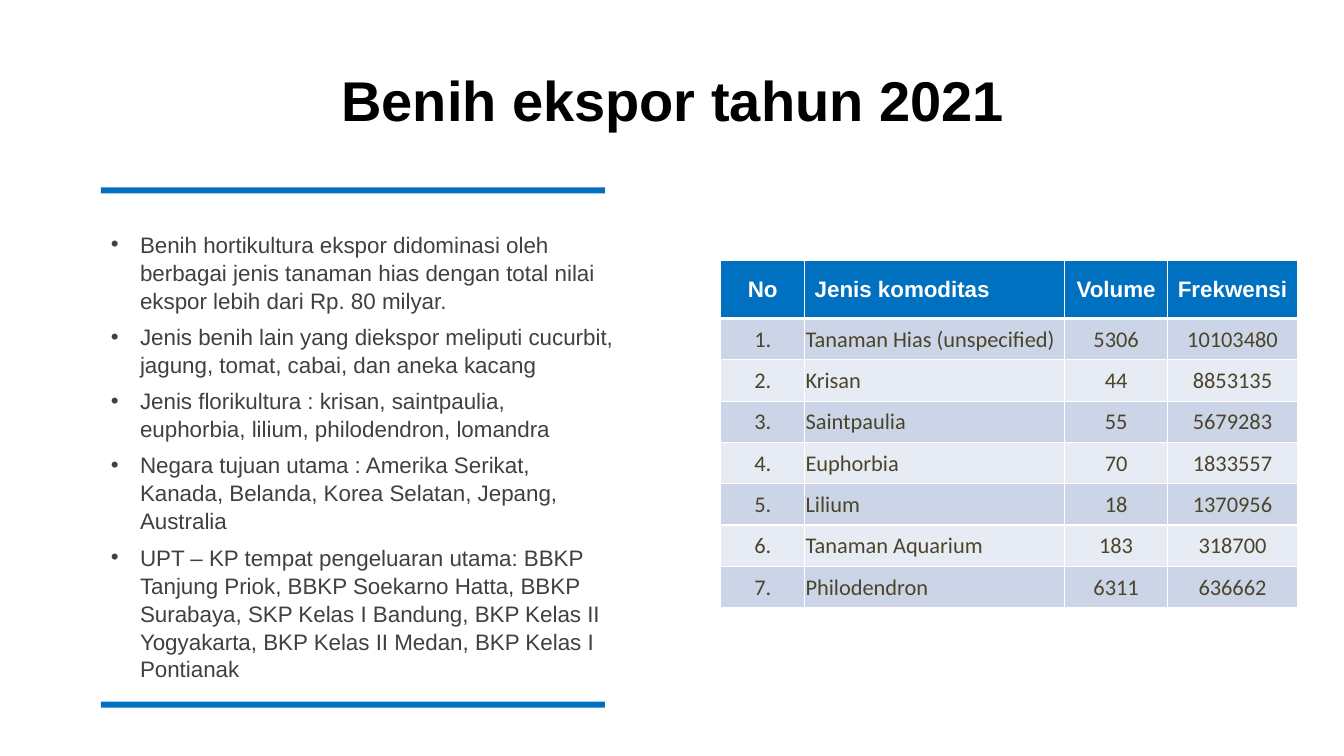
"""Build the slide on seed exports in 2021."""
import pptx
import pptx.dml.color
import pptx.enum.shapes
import pptx.enum.text
import pptx.oxml
import pptx.oxml.ns
import pptx.util
from lxml import etree

Inches, Pt = pptx.util.Inches, pptx.util.Pt
ALIGN = pptx.enum.text.PP_ALIGN
MIDDLE = pptx.enum.text.MSO_ANCHOR.MIDDLE

TITLE = "Benih ekspor tahun 2021"
POINTS = [
    "Benih hortikultura ekspor didominasi oleh berbagai jenis tanaman hias dengan total nilai ekspor lebih dari Rp. 80 milyar.",
    "Jenis benih lain yang diekspor meliputi cucurbit, jagung, tomat, cabai, dan aneka kacang",
    "Jenis florikultura : krisan, saintpaulia, euphorbia, lilium, philodendron, lomandra",
    "Negara tujuan utama : Amerika Serikat, Kanada, Belanda, Korea Selatan, Jepang, Australia",
    "UPT – KP tempat pengeluaran utama: BBKP Tanjung Priok, BBKP Soekarno Hatta, BBKP Surabaya, "
    "SKP Kelas I Bandung, BKP Kelas II Yogyakarta, BKP Kelas II Medan, BKP Kelas I Pontianak",
]
HEADER = ("No", "Jenis komoditas", "Volume", "Frekwensi")
COMMODITIES = [
    ("Tanaman Hias (unspecified)", 5306, 10103480),
    ("Krisan", 44, 8853135),
    ("Saintpaulia", 55, 5679283),
    ("Euphorbia", 70, 1833557),
    ("Lilium", 18, 1370956),
    ("Tanaman Aquarium", 183, 318700),
    ("Philodendron", 6311, 636662),
]
COL_WIDTHS = (0.83, 2.58, 1.02, 1.29)
HEADER_HEIGHT, ROW_HEIGHT = 0.58, 0.41
RULE_TOPS = (1.86, 6.96)
BLUE, WHITE, BLACK, GREY, OLIVE = "0070C0", "FFFFFF", "000000", "404040", "4A452A"
BANDS = ("CCD5E8", "E7EBF4")


def rgb(value):
    return pptx.dml.color.RGBColor.from_string(value)


def fill(target, color):
    target.fill.solid()
    target.fill.fore_color.rgb = rgb(color)


def add_run(p, text, size, font, color, bold=False):
    r = p.add_run()
    r.text = text
    r.font.size, r.font.name, r.font.bold = Pt(size), font, bold
    r.font.color.rgb = rgb(color)


def add_bullet(p, indent):
    pPr = p._p.get_or_add_pPr()
    pPr.set("marL", str(Inches(indent)))
    pPr.set("indent", str(-Inches(indent)))
    for tag, key, value in (("a:buFont", "typeface", "Arial"), ("a:buChar", "char", "•")):
        etree.SubElement(pPr, pptx.oxml.ns.qn(tag)).set(key, value)


def set_borders(cell, widths):
    tcPr = cell._tc.get_or_add_tcPr()
    for i, (side, width) in enumerate(zip("LRTB", widths)):
        tcPr.insert(i, pptx.oxml.parse_xml(
            f'<a:ln{side} {pptx.oxml.ns.nsdecls("a")} w="{Pt(width)}"><a:solidFill>'
            f'<a:srgbClr val="{WHITE}"/></a:solidFill></a:ln{side}>'))


def add_title(s):
    title = s.shapes.title
    title.left, title.top, title.width, title.height = map(Inches, (0.34, 0.63, 12.66, 0.79))
    tf = title.text_frame
    tf.word_wrap, tf.vertical_anchor = True, MIDDLE
    p = tf.paragraphs[0]
    p.alignment, p.line_spacing = ALIGN.CENTER, 0.9
    add_run(p, TITLE, 40, "Arial", BLACK, True)


def add_rule(s, top):
    rule = s.shapes.add_shape(pptx.enum.shapes.MSO_SHAPE.RECTANGLE,
                              Inches(1), Inches(top), Inches(5), Inches(0.06))
    rule.shadow.inherit = False
    fill(rule, BLUE)
    rule.line.fill.background()


def add_points(s):
    tf = s.shapes.add_textbox(*map(Inches, (1, 2.23, 5.19, 4.48))).text_frame
    tf.word_wrap = True
    for i, text in enumerate(POINTS):
        p = tf.add_paragraph() if i else tf.paragraphs[0]
        add_bullet(p, 0.29)
        p.line_spacing = 1.04
        p.space_after = Pt(6 if i < len(POINTS) - 1 else 0)
        add_run(p, text, 16, "Arial", GREY)


def add_commodities(s):
    rows = [HEADER] + [(f"{n}.", *row) for n, row in enumerate(COMMODITIES, 1)]
    height = HEADER_HEIGHT + ROW_HEIGHT * len(COMMODITIES)
    table = s.shapes.add_table(len(rows), len(HEADER), Inches(7.15), Inches(2.58),
                               Inches(sum(COL_WIDTHS)), Inches(height)).table
    for column, width in zip(table.columns, COL_WIDTHS):
        column.width = Inches(width)
    for i, row in enumerate(rows):
        table.rows[i].height = Inches(ROW_HEIGHT if i else HEADER_HEIGHT)
        for j, value in enumerate(row):
            cell = table.cell(i, j)
            cell.vertical_anchor = MIDDLE
            p = cell.text_frame.paragraphs[0]
            p.alignment = ALIGN.LEFT if j == 1 else ALIGN.CENTER
            if i:
                cell.margin_left = cell.margin_right = cell.margin_top = Inches(0.01)
                cell.margin_bottom = 0
                fill(cell, BANDS[(i - 1) % 2])
                add_run(p, str(value), 16, "Calibri", OLIVE)
            else:
                fill(cell, BLUE)
                add_run(p, value, 16, "Arial", WHITE, True)
            set_borders(cell, (1, 1, 3 if i == 1 else 1, 1 if i else 3))


def main():
    prs = pptx.Presentation()
    prs.slide_width, prs.slide_height = Inches(13.33), Inches(7.5)
    s = prs.slides.add_slide(prs.slide_layouts[5])
    add_title(s)
    add_points(s)
    add_commodities(s)
    for top in RULE_TOPS:
        add_rule(s, top)
    prs.save("out.pptx")


if __name__ == "__main__":
    main()
